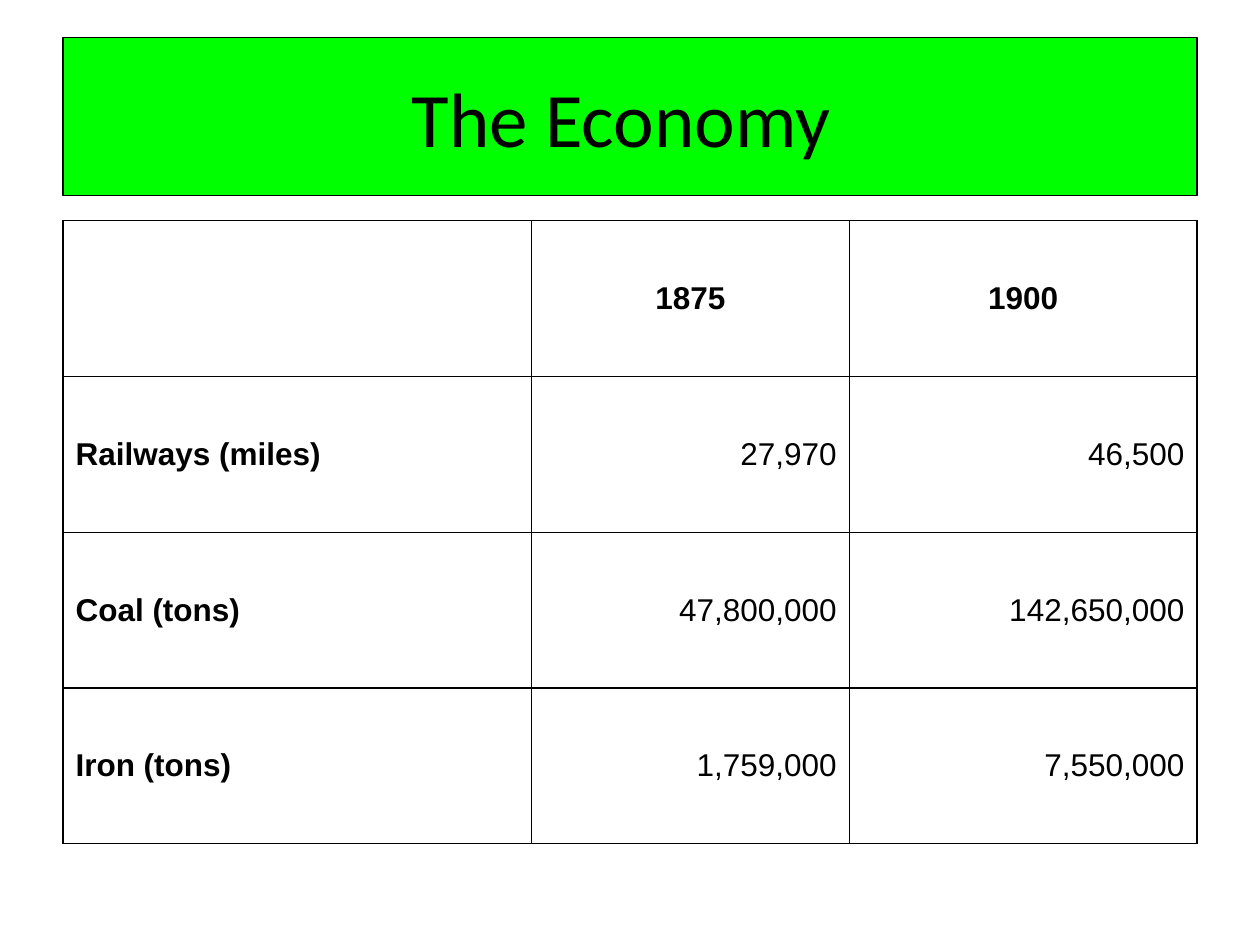
from lxml.etree import SubElement
from pptx import Presentation
from pptx.dml.color import RGBColor
from pptx.enum.shapes import MSO_SHAPE as Preset
from pptx.enum.text import MSO_ANCHOR as Anchor, PP_ALIGN as Align
from pptx.oxml.ns import qn
from pptx.util import Cm, Pt

COLORS = {"ink": "000000", "banner": "00FF00"}
ROWS = [
    ("", "1875", "1900"),
    ("Railways (miles)", "27,970", "46,500"),
    ("Coal (tons)", "47,800,000", "142,650,000"),
    ("Iron (tons)", "1,759,000", "7,550,000"),
]


class EconomyPage:
    """Holds the style and the current slide, and draws its elements."""

    line_width = Pt(0.75)
    hanging = Cm(0.95)

    def __init__(self, page):
        self.page = page

    def color(self, name):
        return RGBColor.from_string(COLORS[name])

    def paragraph(self, frame, text, font, size, align, bold=False):
        para = frame.paragraphs[0]
        para.text = text
        para.alignment = align
        para.font.name = font
        para.font.size = Pt(size)
        para.font.bold = bold
        para.font.color.rgb = self.color("ink")
        return para

    def banner(self, text, left, top, width, height):
        box = self.page.shapes.add_shape(Preset.RECTANGLE, left, top, width, height)
        box.shadow.inherit = False
        box.fill.solid()
        box.fill.fore_color.rgb = self.color("banner")
        box.line.color.rgb = self.color("ink")
        box.line.width = self.line_width
        box.text_frame.word_wrap = True
        box.text_frame.vertical_anchor = Anchor.MIDDLE
        self.paragraph(box.text_frame, text, "Calibri", 44, Align.CENTER)

    def border(self, cell):
        properties = cell._tc.get_or_add_tcPr()
        for side in ("a:lnL", "a:lnR", "a:lnT", "a:lnB"):
            line = SubElement(properties, qn(side), w=str(self.line_width))
            fill = SubElement(line, qn("a:solidFill"))
            SubElement(fill, qn("a:srgbClr"), val=COLORS["ink"])

    def cell(self, cell, text, align, bold):
        self.border(cell)
        cell.fill.background()
        cell.vertical_anchor = Anchor.MIDDLE
        para = self.paragraph(cell.text_frame, text, "Arial", 18, align, bold)
        layout = para._p.get_or_add_pPr()
        layout.set("marL", str(self.hanging))
        layout.set("indent", str(-self.hanging))

    def table(self, rows, left, top, widths, row_height):
        table = self.page.shapes.add_table(
            len(rows), len(widths), left, top, sum(widths), row_height * len(rows)
        ).table
        table.first_row = table.horz_banding = False
        for column, width in zip(table.columns, widths):
            column.width = width
        for r, values in enumerate(rows):
            table.rows[r].height = row_height
            for c, text in enumerate(values):
                if c == 0:
                    align = Align.LEFT
                else:
                    align = Align.CENTER if r == 0 else Align.RIGHT
                self.cell(table.cell(r, c), text, align, r == 0 or c == 0)


def main():
    deck = Presentation()
    deck.slide_width, deck.slide_height = Cm(25.4), Cm(19.05)
    economy = EconomyPage(deck.slides.add_slide(deck.slide_layouts[6]))
    economy.banner("The Economy ", Cm(1.27), Cm(0.76), Cm(22.86), Cm(3.18))
    widths = [Cm(9.45), Cm(6.4), Cm(7.01)]
    economy.table(ROWS, Cm(1.27), Cm(4.45), widths, Cm(3.14))
    deck.save("out.pptx")


if __name__ == "__main__":
    main()
